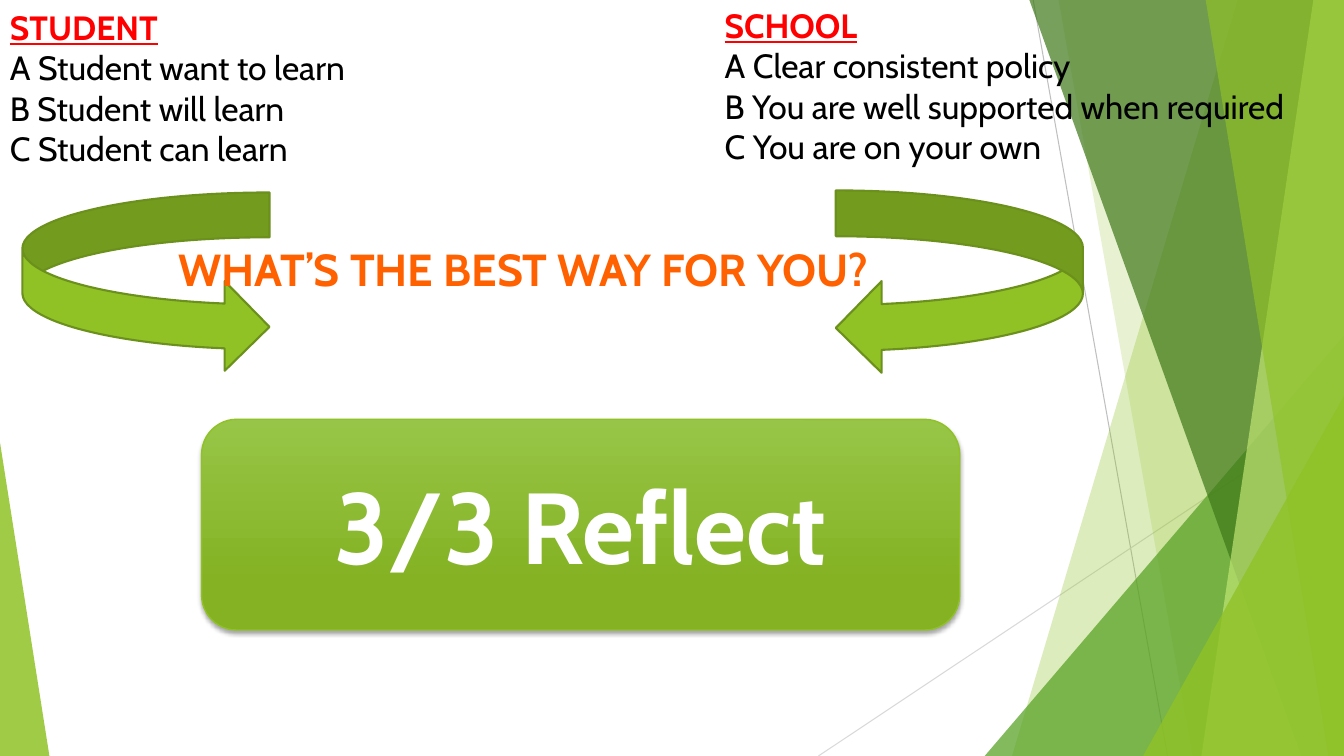
from dataclasses import dataclass

from lxml.etree import SubElement
from pptx import Presentation
from pptx.dml.color import RGBColor
from pptx.enum.shapes import MSO_CONNECTOR, MSO_SHAPE
from pptx.enum.text import MSO_ANCHOR, MSO_AUTO_SIZE, PP_ALIGN
from pptx.oxml.ns import qn
from pptx.shapes.autoshape import Shape
from pptx.slide import Slide
from pptx.text.text import _Paragraph as Paragraph
from pptx.util import Pt

WIDTH, HEIGHT = 960, 540
BLEED_TOP = -0.6
FONT = "Cabin"

BLACK = RGBColor(0x00, 0x00, 0x00)
WHITE = RGBColor(0xFF, 0xFF, 0xFF)
RED = RGBColor(0xFF, 0x00, 0x00)
ORANGE = RGBColor(0xFF, 0x60, 0x00)
LIME = RGBColor(0x90, 0xC2, 0x26)
PALE_LIME = RGBColor(0xC0, 0xE4, 0x74)
GREEN = RGBColor(0x54, 0xA0, 0x21)
FOREST = RGBColor(0x3F, 0x78, 0x19)
OLIVE = RGBColor(0x6B, 0x90, 0x1C)
BANNER_TOP = RGBColor(0x97, 0xC5, 0x47)
BANNER_BOTTOM = RGBColor(0x84, 0xB2, 0x23)
GREY = RGBColor(0xBF, 0xBF, 0xBF)
LIGHT_GREY = RGBColor(0xD9, 0xD9, 0xD9)


@dataclass(frozen=True)
class Ray:
    x1: float
    y1: float
    x2: float
    y2: float
    color: RGBColor


@dataclass(frozen=True)
class Band:
    top_x: float
    bottom_x: float
    color: RGBColor
    opacity: int


@dataclass(frozen=True)
class Wedge:
    left: float
    top: float
    width: float
    apex: float
    color: RGBColor
    opacity: int


@dataclass(frozen=True)
class Choices:
    left: float
    top: float
    width: float
    heading: str
    options: tuple[str, ...]


@dataclass(frozen=True)
class CurvedArrow:
    kind: MSO_SHAPE
    left: float
    top: float
    height: float


RAYS = (
    Ray(738, 0, 834, HEIGHT, GREY),
    Ray(WIDTH, 290, 584.6, HEIGHT, LIGHT_GREY),
)
FACETS = (
    Band(884.2, 722.9, LIME, 30),
    Band(756, 851.8, LIME, 20),
    Wedge(703.4, 239.8, 256.6, 1, GREEN, 72),
    Band(735.1, 929.5, FOREST, 70),
    Band(938.2, 858.2, PALE_LIME, 70),
    Band(861.1, 949, LIME, 65),
    Wedge(816.5, 283, 143.5, 1, LIME, 80),
    Wedge(0, 316.1, 35.3, 0, LIME, 85),
)
CHOICES = (
    Choices(0, 1.4, 273, "STUDENT", (
        "A Student want to learn",
        "B Student will learn",
        "C Student can learn",
    )),
    Choices(510.5, 0, 450, "SCHOOL", (
        "A Clear consistent policy",
        "B You are well supported when required",
        "C You are on your own",
    )),
)
ARROWS = (
    CurvedArrow(MSO_SHAPE.CURVED_RIGHT_ARROW, 16, 137.5, 128),
    CurvedArrow(MSO_SHAPE.CURVED_LEFT_ARROW, 597, 136, 131),
)


def add_ray(s: Slide, ray: Ray) -> None:
    line = s.shapes.add_connector(
        MSO_CONNECTOR.STRAIGHT, Pt(ray.x1), Pt(ray.y1), Pt(ray.x2), Pt(ray.y2))
    line.line.color.rgb = ray.color
    line.line.width = Pt(0.75)
    SubElement(line._element.spPr, qn("a:effectLst"))


def add_facet(s: Slide, facet: Band | Wedge) -> None:
    if isinstance(facet, Band):
        builder = s.shapes.build_freeform(Pt(facet.top_x), Pt(BLEED_TOP))
        builder.add_line_segments([
            (Pt(WIDTH), Pt(BLEED_TOP)),
            (Pt(WIDTH), Pt(HEIGHT)),
            (Pt(facet.bottom_x), Pt(HEIGHT)),
        ], close=True)
        sp = builder.convert_to_shape()
    else:
        sp = s.shapes.add_shape(
            MSO_SHAPE.ISOSCELES_TRIANGLE, Pt(facet.left), Pt(facet.top),
            Pt(facet.width), Pt(HEIGHT - facet.top))
        sp.adjustments[0] = facet.apex
    sp.shadow.inherit = False
    sp.line.fill.background()
    sp.fill.solid()
    sp.fill.fore_color.rgb = facet.color
    set_opacity(sp._element.spPr.find(".//" + qn("a:srgbClr")), facet.opacity)


def set_opacity(color_element, percent: int) -> None:
    SubElement(color_element, qn("a:alpha"), val=str(percent * 1000))


def format_runs(p: Paragraph, size: float, color: RGBColor,
                bold: bool = False, underline: bool = False) -> None:
    for r in p.runs:
        r.font.name = FONT
        r.font.size = Pt(size)
        r.font.color.rgb = color
        r.font.bold = bold
        r.font.underline = underline


def add_text(s: Slide, left: float, top: float, width: float, height: float,
             text: str) -> Shape:
    sp = s.shapes.add_textbox(Pt(left), Pt(top), Pt(width), Pt(height))
    tf = sp.text_frame
    tf.word_wrap = False
    tf.auto_size = MSO_AUTO_SIZE.SHAPE_TO_FIT_TEXT
    tf.text = text
    return sp


def add_choices(s: Slide, choices: Choices) -> None:
    text = "\n".join((choices.heading, *choices.options))
    sp = add_text(s, choices.left, choices.top, choices.width, 124, text)
    heading, *options = sp.text_frame.paragraphs
    format_runs(heading, 24, RED, bold=True, underline=True)
    for p in options:
        format_runs(p, 24, BLACK)


def add_arrow(s: Slide, arrow: CurvedArrow) -> None:
    sp = s.shapes.add_shape(
        arrow.kind, Pt(arrow.left), Pt(arrow.top), Pt(176.5), Pt(arrow.height))
    sp.shadow.inherit = False
    sp.fill.solid()
    sp.fill.fore_color.rgb = LIME
    sp.line.color.rgb = OLIVE
    sp.line.width = Pt(1.5)


def add_question(s: Slide) -> None:
    sp = add_text(s, 116.5, 169.2, 515.5, 46, "WHAT’S THE BEST WAY FOR YOU?")
    p = sp.text_frame.paragraphs[0]
    p.alignment = PP_ALIGN.CENTER
    format_runs(p, 32, ORANGE, bold=True)


def add_banner(s: Slide) -> None:
    sp = s.shapes.add_shape(
        MSO_SHAPE.ROUNDED_RECTANGLE, Pt(144), Pt(299.5), Pt(541.5), Pt(150.5))
    sp.fill.gradient()
    sp.fill.gradient_angle = 270
    stops = ((0, BANNER_TOP), (0.78, BANNER_BOTTOM))
    for stop, (position, color) in zip(sp.fill.gradient_stops, stops):
        stop.position = position
        stop.color.rgb = color
    sp.line.color.rgb = LIME
    sp.line.width = Pt(1)
    sp.shadow.inherit = False
    shadow = SubElement(
        sp._element.spPr.find(qn("a:effectLst")), qn("a:outerShdw"),
        blurRad=str(Pt(3)), dist=str(Pt(2)), dir="5400000", rotWithShape="0")
    set_opacity(SubElement(shadow, qn("a:srgbClr"), val=str(BLACK)), 35)
    tf = sp.text_frame
    tf.text = "3/3 Reflect"
    tf.vertical_anchor = MSO_ANCHOR.MIDDLE
    p = tf.paragraphs[0]
    p.alignment = PP_ALIGN.CENTER
    format_runs(p, 72, WHITE, bold=True)


def main() -> None:
    prs = Presentation()
    prs.slide_width, prs.slide_height = Pt(WIDTH), Pt(HEIGHT)
    s = prs.slides.add_slide(prs.slide_layouts[6])
    for ray in RAYS:
        add_ray(s, ray)
    for facet in FACETS:
        add_facet(s, facet)
    add_banner(s)
    for choices in CHOICES:
        add_choices(s, choices)
    for arrow in ARROWS:
        add_arrow(s, arrow)
    add_question(s)
    prs.save("out.pptx")


if __name__ == "__main__":
    main()
